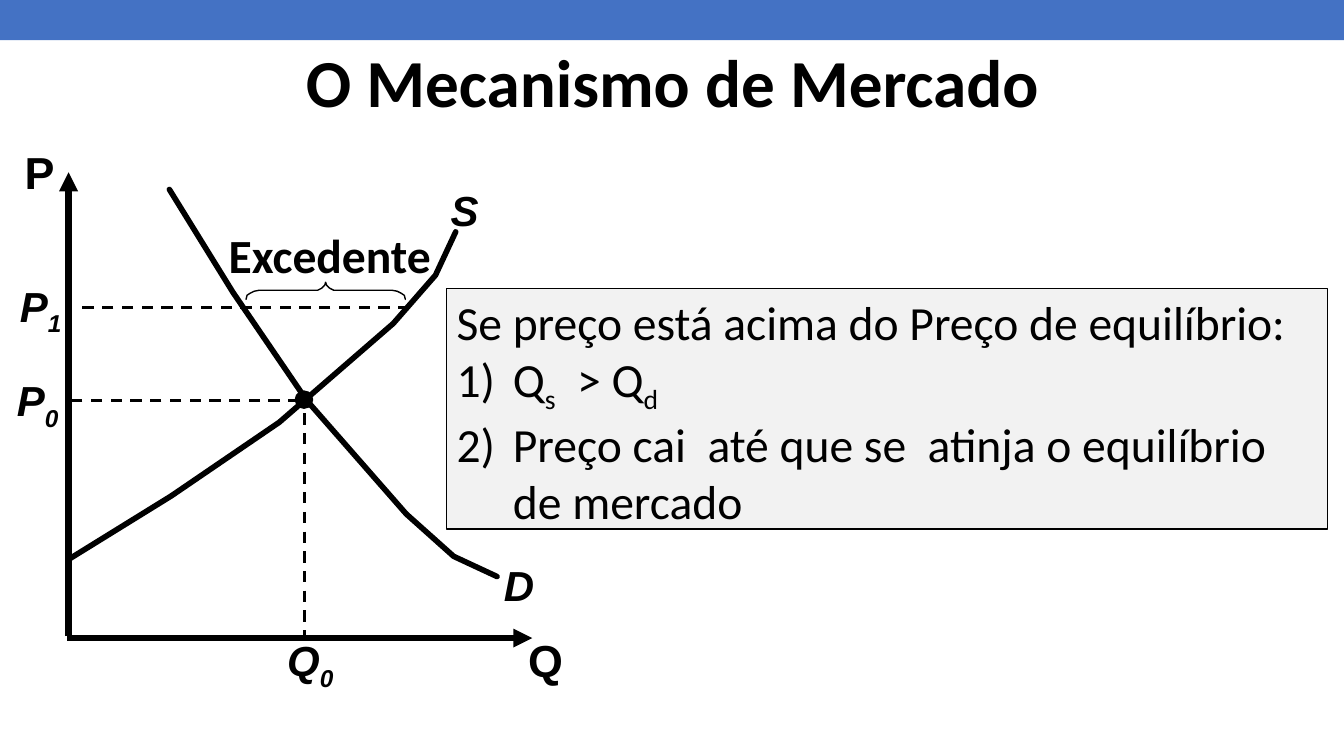
"""Build the market mechanism slide with its supply and demand diagram."""
from dataclasses import dataclass

from lxml import etree
from pptx import Presentation
from pptx.dml import color
from pptx.enum import dml, shapes, text
from pptx.oxml import ns
from pptx.util import Inches, Pt

Point = tuple[float, float]


@dataclass(frozen=True)
class Theme:
    """Colours, fonts and type sizes of the slide."""
    ink: color.RGBColor = color.RGBColor(0, 0, 0)
    band: color.RGBColor = color.RGBColor(0x44, 0x72, 0xC4)
    panel: color.RGBColor = color.RGBColor(0xF2, 0xF2, 0xF2)
    diagram_font: str = "Arial"
    body_font: str = "Calibri"
    title_size: int = 48
    body_size: int = 34
    axis_size: int = 32
    curve_size: int = 30


THEME = Theme()


@dataclass(frozen=True)
class Span:
    """A stretch of text, lowered when it is a subscript."""
    words: str
    lowered: bool = False


@dataclass(frozen=True)
class Label:
    """A one-line text box."""
    spans: list[Span]
    left: float
    top: float
    width: float
    height: float = 0.6
    size: int = THEME.curve_size
    font: str = THEME.diagram_font
    italic: bool = True
    align: text.PP_ALIGN = text.PP_ALIGN.LEFT
    anchor: text.MSO_ANCHOR = text.MSO_ANCHOR.TOP


@dataclass(frozen=True)
class Segment:
    """A straight line of the diagram."""
    start: Point
    end: Point
    weight: float = 2
    arrow: bool = False


@dataclass(frozen=True)
class Curve:
    """An open outline through several points."""
    points: list[Point]
    weight: float = 4


DEMAND = Curve([(1.68, 1.88), (2.31, 2.9), (3.04, 3.97), (4.03, 5.1), (4.5, 5.52), (4.93, 5.72)])
SUPPLY = Curve([(0.68, 5.55), (1.7, 4.92), (2.77, 4.19), (3.9, 3.21), (4.32, 2.73), (4.52, 2.3)])
BRACE_MIDDLE = 3.23
BRACE_HALF = [(0.79, 2.97), (0.78, 2.93), (0.75, 2.91), (0.71, 2.89), (0.66, 2.88),
              (0.13, 2.88), (0.08, 2.88), (0.04, 2.86), (0.01, 2.83), (0, 2.8)]
BRACE = Curve([(BRACE_MIDDLE - x, y) for x, y in BRACE_HALF]
              + [(BRACE_MIDDLE + x, y) for x, y in BRACE_HALF[-2::-1]], 1)

SEGMENTS = [
    Segment((0.68, 6.31), (0.68, 1.71), 4.5, True),
    Segment((0.66, 6.33), (5.28, 6.33), 4.5, True),
    Segment((2.97, 3.97), (0.65, 3.97)),
    Segment((3.02, 4.1), (3.02, 6.34)),
    Segment((4.06, 3.05), (0.75, 3.05)),
]

LABELS = [
    Label([Span("Q")], 5.14, 6.23, 0.67, 0.64, THEME.axis_size, italic=False),
    Label([Span("P")], 0.14, 1.39, 0.5, 0.64, THEME.axis_size, italic=False,
          align=text.PP_ALIGN.RIGHT),
    Label([Span("D")], 4.9, 5.5, 0.46),
    Label([Span("S")], 4.37, 1.78, 0.48),
    Label([Span("P"), Span("0", True)], 0.07, 3.67, 0.64),
    Label([Span("P"), Span("1", True)], 0.1, 2.73, 0.64),
    Label([Span("Q"), Span("0", True)], 2.75, 6.25, 0.68),
    Label([Span("Excedente")], 2.17, 2.19, 2.23, 0.67, THEME.body_size, THEME.body_font, False),
    Label([Span("O Mecanismo de Mercado")], 2.85, 0.27, 7.64, 0.98, THEME.title_size,
          THEME.body_font, False, text.PP_ALIGN.CENTER, text.MSO_ANCHOR.BOTTOM),
]

PANEL_INTRO = [Span("Se preço está acima do Preço de equilíbrio:")]
PANEL_STEPS = [
    [Span("Q"), Span("s", True), Span("  > Q"), Span("d", True)],
    [Span("Preço cai  até que se  atinja o equilíbrio de mercado")],
]


def add_spans(para, spans: list[Span], font: str, size: int) -> None:
    """Write the spans into a paragraph in one font."""
    for span in spans:
        run = para.add_run()
        run.text = span.words
        if span.lowered:
            run._r.get_or_add_rPr().set("baseline", "-25000")
    para.font.name = font
    para.font.size = Pt(size)
    para.font.color.rgb = THEME.ink


def add_label(page, label: Label) -> None:
    """Draw a bold one-line label."""
    box = page.shapes.add_textbox(Inches(label.left), Inches(label.top),
                                  Inches(label.width), Inches(label.height))
    frame = box.text_frame
    frame.word_wrap = False
    frame.vertical_anchor = label.anchor
    para = frame.paragraphs[0]
    para.alignment = label.align
    add_spans(para, label.spans, label.font, label.size)
    para.font.bold = True
    para.font.italic = label.italic


def add_segment(page, segment: Segment) -> None:
    """Draw an axis with an arrowhead or a dashed guide."""
    ends = [Inches(value) for value in segment.start + segment.end]
    line = page.shapes.add_connector(shapes.MSO_CONNECTOR.STRAIGHT, *ends)
    line.line.color.rgb = THEME.ink
    line.line.width = Pt(segment.weight)
    if segment.arrow:
        etree.SubElement(line.line._get_or_add_ln(), ns.qn("a:tailEnd"), type="triangle")
    else:
        line.line.dash_style = dml.MSO_LINE.DASH
    etree.SubElement(line._element.spPr, ns.qn("a:effectLst"))


def add_curve(page, curve: Curve) -> None:
    """Draw an open outline with rounded ends."""
    points = [(Inches(x), Inches(y)) for x, y in curve.points]
    builder = page.shapes.build_freeform(*points[0])
    builder.add_line_segments(points[1:], close=False)
    outline = builder.convert_to_shape()
    outline.shadow.inherit = False
    outline.fill.background()
    outline.line.color.rgb = THEME.ink
    outline.line.width = Pt(curve.weight)
    stroke = outline.line._get_or_add_ln()
    stroke.set("cap", "rnd")
    etree.SubElement(stroke, ns.qn("a:round"))


def add_block(page, kind: shapes.MSO_SHAPE, place: tuple[float, float, float, float],
              fill: color.RGBColor, outlined: bool = True):
    """Draw a filled preset shape and return it."""
    block = page.shapes.add_shape(kind, *(Inches(value) for value in place))
    block.shadow.inherit = False
    block.fill.solid()
    block.fill.fore_color.rgb = fill
    if outlined:
        block.line.color.rgb = THEME.ink
        block.line.width = Pt(1)
    else:
        block.line.fill.background()
    return block


def add_panel(page) -> None:
    """Draw the explanation with its numbered steps."""
    panel = add_block(page, shapes.MSO_SHAPE.RECTANGLE, (4.43, 2.86, 8.74, 2.39), THEME.panel)
    frame = panel.text_frame
    frame.word_wrap = True
    frame.vertical_anchor = text.MSO_ANCHOR.TOP
    intro = frame.paragraphs[0]
    intro.alignment = text.PP_ALIGN.LEFT
    add_spans(intro, PANEL_INTRO, THEME.body_font, THEME.body_size)
    for step in PANEL_STEPS:
        para = frame.add_paragraph()
        para.alignment = text.PP_ALIGN.LEFT
        properties = para._p.get_or_add_pPr()
        properties.set("marL", str(Inches(0.56)))
        properties.set("indent", str(-Inches(0.56)))
        etree.SubElement(properties, ns.qn("a:buAutoNum"), type="arabicParenR")
        add_spans(para, step, THEME.body_font, THEME.body_size)


def main() -> None:
    """Build and save the slide."""
    deck = Presentation()
    deck.slide_width, deck.slide_height = Inches(13.33), Inches(7.5)
    page = deck.slides.add_slide(deck.slide_layouts[6])
    add_block(page, shapes.MSO_SHAPE.RECTANGLE, (0, 0, 13.33, 0.4), THEME.band, False)
    for segment in SEGMENTS:
        add_segment(page, segment)
    for curve in (DEMAND, SUPPLY, BRACE):
        add_curve(page, curve)
    add_block(page, shapes.MSO_SHAPE.OVAL, (2.93, 3.88, 0.17, 0.17), THEME.ink)
    add_panel(page)
    for label in LABELS:
        add_label(page, label)
    deck.save("out.pptx")


if __name__ == "__main__":
    main()
